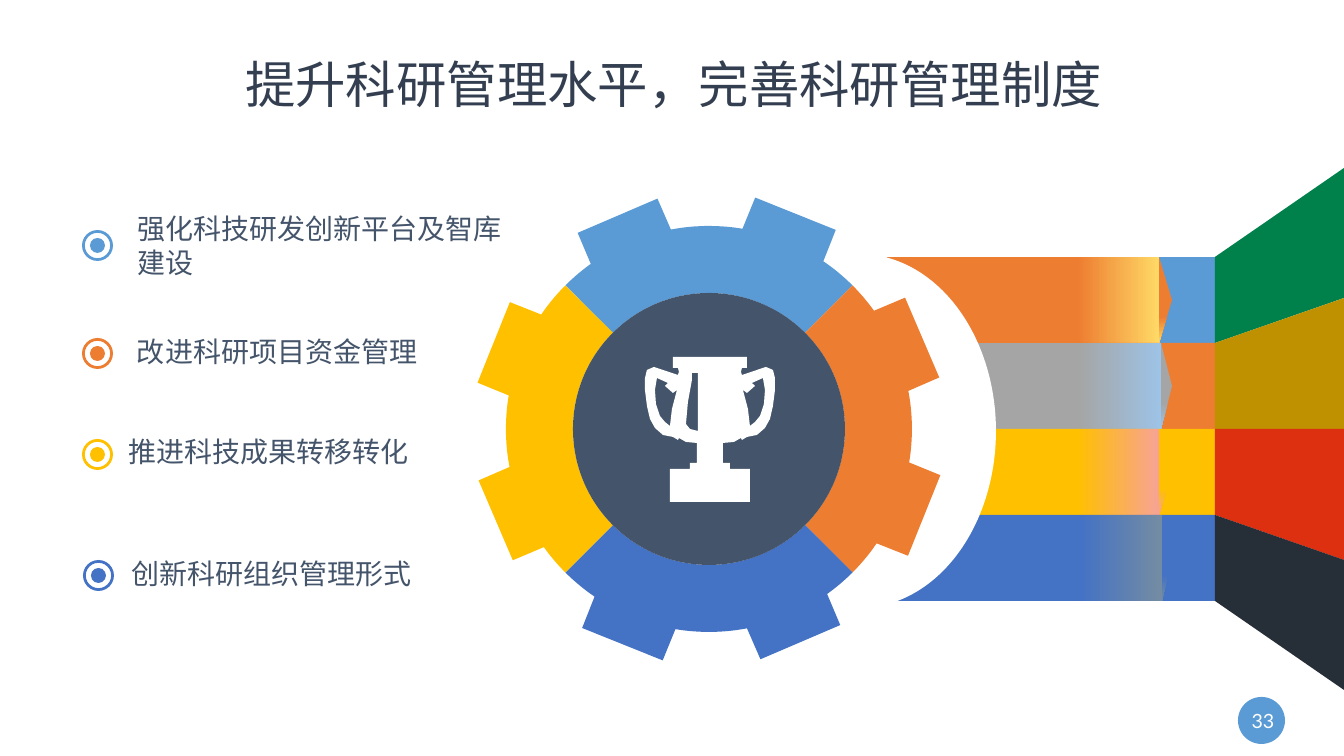
"""Build the research management slide with a four-part gear and ribbons."""
from copy import deepcopy
from dataclasses import dataclass
from math import cos, radians, sin

from lxml.etree import SubElement
from pptx import Presentation
from pptx.dml.color import RGBColor
from pptx.enum.shapes import MSO_SHAPE
from pptx.enum.text import MSO_ANCHOR, MSO_AUTO_SIZE, PP_ALIGN
from pptx.oxml.ns import qn
from pptx.util import Emu, Inches, Pt


@dataclass(frozen=True)
class Theme:
    blue: str = "5B9BD5"
    orange: str = "ED7D31"
    gold: str = "FFC000"
    navy: str = "4472C4"
    gray: str = "A5A5A5"
    slate: str = "44546A"
    white: str = "FFFFFF"
    title_color: str = "333F50"
    body_font: str = "Noto Sans CJK SC"
    number_font: str = "Lato"
    title_size: int = 36
    label_size: int = 20
    number_size: int = 14


THEME = Theme()
SCALE = 914400 / 100.8
PAGE_SIZE = (1344, 756)

TITLE = ("提升科研管理水平，完善科研管理制度", (94, 36, 1159, 102))
LABELS = [
    ("强化科技研发创新平台及智库建设", THEME.blue, (82, 230), (132, 207, 393, 79)),
    ("改进科研项目资金管理", THEME.orange, (82, 338), (132, 330, 339, 46)),
    ("推进科技成果转移转化", THEME.gold, (82, 439), (123, 430, 376, 46)),
    ("创新科研组织管理形式", THEME.navy, (83, 560), (126, 552, 373, 46)),
]
PAGE_NUMBER = ("33", (1245, 704, 36, 33), (1238, 697, 47, 47))

BAND_LEFT, BAND_TOP, BAND_WIDTH, BAND_HEIGHT = 887, 257, 328, 86
WING_EDGES = [168, 298, 429, 560, 690]
BANDS = [
    (THEME.blue, "00814C", THEME.orange, "FFD966", 272, 13),
    (THEME.orange, "BF9000", THEME.gray, "9DC3E6", 274, 11),
    (THEME.gold, "DD3011", THEME.gold, "F7A394", 272, 13),
    (THEME.navy, "262F38", THEME.navy, "748CA3", 275, 10),
]
BAND_CUTOUT = (723, 254, 273, 354)

GEAR_CENTER = (709, 429)
HUB_RADIUS, RIM_RADIUS, TIP_RADIUS = 136, 203, 236
TOOTH_ANGLES = (-23.2, 21.9)
TOOTH_BASE, TOOTH_TIP = 12.4, 10.6
GEAR_PARTS = [THEME.blue, THEME.orange, THEME.navy, THEME.gold]

TROPHY_AXIS = 710
TROPHY_OUTLINE = [
    (673, 357), (673, 368), (678, 368), (679, 372), (678, 375), (654, 367),
    (647, 370), (645, 378), (645, 390), (647, 406), (650, 419), (655, 428),
    (663, 435), (673, 437), (678, 440), (679, 438), (686, 442), (697, 443),
    (697, 463), (690, 463), (690, 469), (670, 469), (670, 502),
]
TROPHY_HANDLE = [
    (677, 390), (672, 409), (670, 426), (665, 422), (660, 416), (656, 404),
    (655, 390), (657, 378), (668, 383), (665, 386), (673, 393),
]
TROPHY_SHINE = [
    (698, 373), (698, 431), (690, 429), (686, 424), (688, 402), (692, 380), (692, 373),
]


def emu(*lengths):
    return [Emu(round(length * SCALE)) for length in lengths]


def paint(shape, color, end_color=None):
    shape.shadow.inherit = False
    shape.line.fill.background()
    if end_color is None:
        shape.fill.solid()
        shape.fill.fore_color.rgb = RGBColor.from_string(color)
        return shape
    shape.fill.gradient()
    shape.fill.gradient_angle = 0
    stop_list = next(shape._element.iter(qn("a:gsLst")))
    stop_list.insert(1, deepcopy(stop_list[0]))
    stops = zip(shape.fill.gradient_stops, (0, 0.7, 1), (color, color, end_color))
    for stop, position, stop_color in stops:
        stop.position = position
        stop.color.rgb = RGBColor.from_string(stop_color)
    return shape


def add_preset(page, kind, frame, color, end_color=None):
    return paint(page.shapes.add_shape(kind, *emu(*frame)), color, end_color)


def add_outline(page, contours, color):
    builder = page.shapes.build_freeform(*emu(*contours[0][0]), scale=1.0)
    for index, contour in enumerate(contours):
        if index:
            builder.move_to(*emu(*contour[0]))
        builder.add_line_segments([emu(*point) for point in contour[1:]], close=True)
    return paint(builder.convert_to_shape(), color)


def write(box, text, *, size, color, font=THEME.body_font, align=PP_ALIGN.LEFT,
          anchor=MSO_ANCHOR.TOP, spacing=None, fit=MSO_AUTO_SIZE.SHAPE_TO_FIT_TEXT):
    frame = box.text_frame
    frame.word_wrap = True
    frame.auto_size = fit
    frame.vertical_anchor = anchor
    frame.margin_left = frame.margin_right = Inches(0.05)
    frame.margin_top = frame.margin_bottom = Inches(0.05)
    para = frame.paragraphs[0]
    para.alignment = align
    para.line_spacing = spacing
    span = para.add_run()
    span.text = text
    span.font.size = Pt(size)
    span.font.name = font
    span.font.color.rgb = RGBColor.from_string(color)
    SubElement(span.font._element, qn("a:ea"), typeface=font)


def add_title(page):
    text, frame = TITLE
    title = page.shapes.title
    title.left, title.top, title.width, title.height = emu(*frame)
    write(title, text, size=THEME.title_size, color=THEME.title_color,
          align=PP_ALIGN.CENTER, anchor=MSO_ANCHOR.MIDDLE, spacing=0.9,
          fit=MSO_AUTO_SIZE.NONE)


def add_bands(page):
    right = BAND_LEFT + BAND_WIDTH
    for row, (base, wing, start, end, length, tip) in enumerate(BANDS):
        top = BAND_TOP + row * BAND_HEIGHT
        bottom = top + BAND_HEIGHT
        add_preset(page, MSO_SHAPE.RECTANGLE,
                   (BAND_LEFT, top, BAND_WIDTH, BAND_HEIGHT), base)
        add_outline(page, [[(right, top), (PAGE_SIZE[0], WING_EDGES[row]),
                            (PAGE_SIZE[0], WING_EDGES[row + 1]), (right, bottom)]], wing)
        add_preset(page, MSO_SHAPE.RECTANGLE,
                   (BAND_LEFT, top, length, BAND_HEIGHT), start, end)
        tip_left = BAND_LEFT + length + (tip - BAND_HEIGHT) / 2
        tip_top = top + (BAND_HEIGHT - tip) / 2
        arrow = add_preset(page, MSO_SHAPE.ISOSCELES_TRIANGLE,
                           (tip_left, tip_top, BAND_HEIGHT, tip), start, end)
        arrow.rotation = 90
    add_preset(page, MSO_SHAPE.OVAL, BAND_CUTOUT, THEME.white)


def polar(radius, angle):
    x, y = GEAR_CENTER
    return x + radius * sin(radians(angle)), y - radius * cos(radians(angle))


def arc(radius, start, end, steps=24):
    return [polar(radius, start + (end - start) * step / steps) for step in range(steps + 1)]


def add_gear(page):
    for quarter, color in enumerate(GEAR_PARTS):
        turn = 90 * quarter
        outline = arc(HUB_RADIUS, turn + 45, turn - 45)
        rim_start = turn - 45
        for tooth in TOOTH_ANGLES:
            middle = turn + tooth
            outline += arc(RIM_RADIUS, rim_start, middle - TOOTH_BASE)
            outline += [polar(TIP_RADIUS, middle - TOOTH_TIP),
                        polar(TIP_RADIUS, middle + TOOTH_TIP)]
            rim_start = middle + TOOTH_BASE
        outline += arc(RIM_RADIUS, rim_start, turn + 45)
        add_outline(page, [outline], color)
    x, y = GEAR_CENTER
    add_preset(page, MSO_SHAPE.OVAL,
               (x - HUB_RADIUS, y - HUB_RADIUS, 2 * HUB_RADIUS, 2 * HUB_RADIUS), THEME.slate)


def mirror(points):
    return [(2 * TROPHY_AXIS - x, y) for x, y in reversed(points)]


def add_trophy(page):
    add_outline(page, [TROPHY_OUTLINE + mirror(TROPHY_OUTLINE), TROPHY_HANDLE,
                       mirror(TROPHY_HANDLE), TROPHY_SHINE], THEME.white)


def add_labels(page):
    for text, color, (left, top), frame in LABELS:
        add_preset(page, MSO_SHAPE.OVAL, (left + 8, top + 8, 15, 15), color)
        ring = add_preset(page, MSO_SHAPE.DONUT, (left, top, 31, 31), color)
        ring.adjustments[0] = 0.09
        box = page.shapes.add_textbox(*emu(*frame))
        write(box, text, size=THEME.label_size, color=THEME.slate)


def add_page_number(page):
    text, frame, disc = PAGE_NUMBER
    add_preset(page, MSO_SHAPE.OVAL, disc, THEME.blue)
    write(page.shapes.add_textbox(*emu(*frame)), text, size=THEME.number_size,
          color=THEME.white, font=THEME.number_font, align=PP_ALIGN.CENTER)


def main():
    deck = Presentation()
    deck.slide_width, deck.slide_height = emu(*PAGE_SIZE)
    page = deck.slides.add_slide(deck.slide_layouts[5])
    for draw in (add_title, add_bands, add_gear, add_trophy, add_labels, add_page_number):
        draw(page)
    deck.save("out.pptx")


if __name__ == "__main__":
    main()
